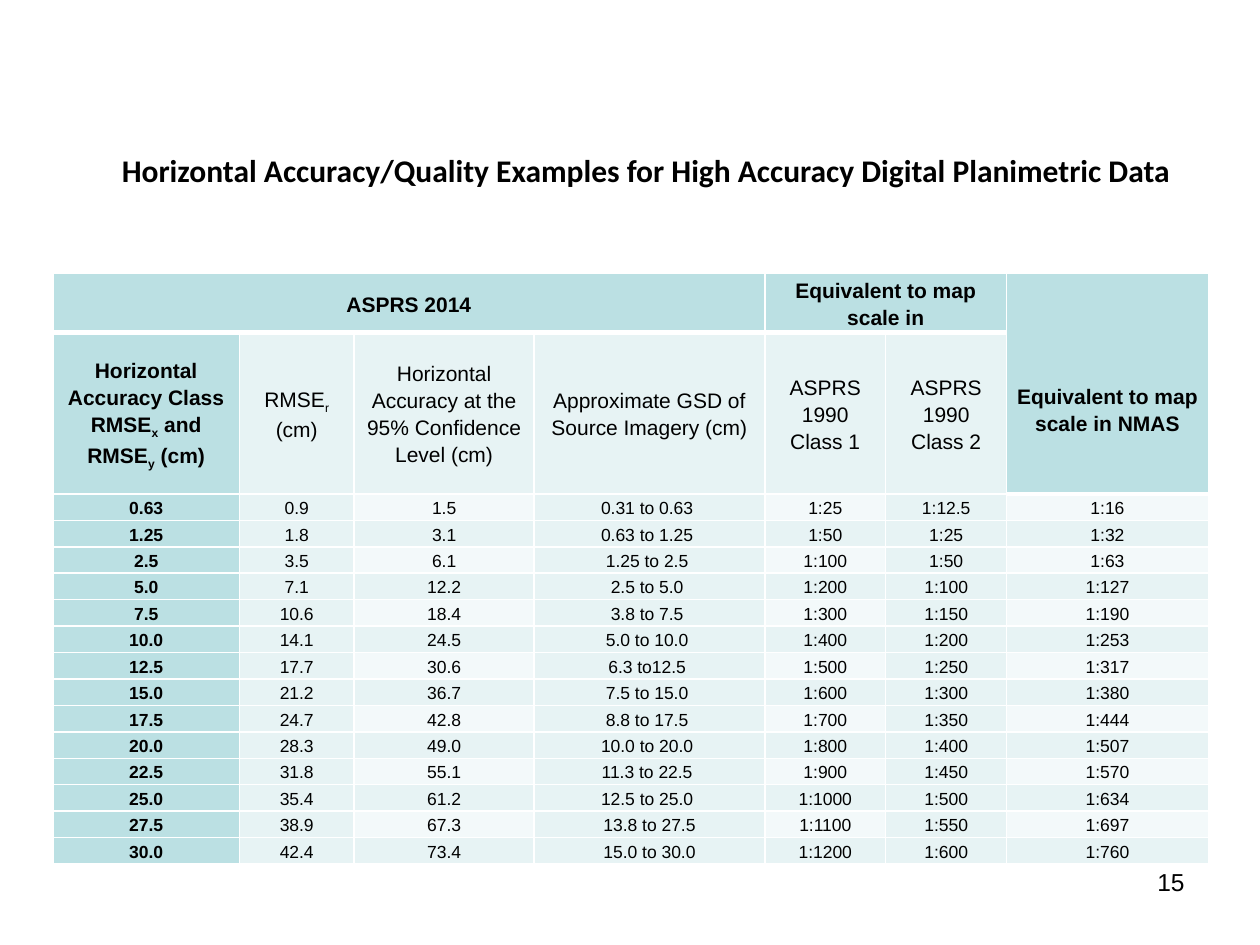
from lxml.etree import SubElement
from pptx import Presentation
from pptx.dml.color import RGBColor
from pptx.enum.text import MSO_ANCHOR, PP_ALIGN
from pptx.oxml.ns import qn
from pptx.util import Inches, Pt

HUES = {"ink": "000000", "line": "FFFFFF", "head": "BBE0E3",
        "band": "E7F3F4", "pale": "F3F9FA"}
WIDTHS = [1.48, 0.91, 1.43, 1.83, 0.96, 0.96, 1.6]
HEADS = [
    ["ASPRS 2014", "", "", "", "Equivalent to map scale in", "",
     "Equivalent to map scale in NMAS"],
    ["Horizontal Accuracy Class RMSE_x_ and RMSE_y_ (cm)", "RMSE_r_ (cm)",
     "Horizontal Accuracy at the 95% Confidence Level (cm)",
     "Approximate GSD of Source Imagery (cm)",
     "ASPRS 1990 Class 1", "ASPRS 1990 Class 2", ""],
]
DATA = [
    ["0.63", "0.9", "1.5", "0.31 to 0.63 ", "1:25", "1:12.5", "1:16"],
    ["1.25", "1.8", "3.1", "0.63 to 1.25 ", "1:50", "1:25", "1:32"],
    ["2.5", "3.5", "6.1", "1.25 to 2.5 ", "1:100", "1:50", "1:63"],
    ["5.0", "7.1", "12.2", "2.5 to 5.0 ", "1:200", "1:100", "1:127"],
    ["7.5", "10.6", "18.4", "3.8 to 7.5 ", "1:300", "1:150", "1:190"],
    ["10.0", "14.1", "24.5", "5.0 to 10.0 ", "1:400", "1:200", "1:253"],
    ["12.5", "17.7", "30.6", "6.3 to12.5 ", "1:500", "1:250", "1:317"],
    ["15.0", "21.2", "36.7", "7.5 to 15.0 ", "1:600", "1:300", "1:380"],
    ["17.5", "24.7", "42.8", "8.8 to 17.5 ", "1:700", "1:350", "1:444"],
    ["20.0", "28.3", "49.0", "10.0 to 20.0 ", "1:800", "1:400", "1:507"],
    ["22.5", "31.8", "55.1", "11.3 to 22.5 ", "1:900", "1:450", "1:570"],
    ["25.0", "35.4", "61.2", "12.5 to 25.0 ", "1:1000", "1:500", "1:634"],
    ["27.5", "38.9", "67.3", "13.8 to 27.5", "1:1100", "1:550", "1:697"],
    ["30.0", "42.4", "73.4", "15.0 to 30.0", "1:1200", "1:600", "1:760"],
]


def write(para, text, size, bold=False, face="Arial", align=PP_ALIGN.CENTER):
    """Fill a paragraph; parts between underscores become subscripts."""
    para.alignment = align
    font = para.font
    font.name, font.size, font.bold = face, Pt(size), bold
    font.color.rgb = RGBColor.from_string(HUES["ink"])
    for i, part in enumerate(text.split("_")):
        run = para.add_run()
        run.text = part
        if i % 2:
            run._r.get_or_add_rPr().set("baseline", "-25000")


def edge(cell, side, width):
    line = SubElement(cell._tc.get_or_add_tcPr(), qn(f"a:ln{side}"),
                      w=str(Pt(width)))
    fill = SubElement(line, qn("a:solidFill"))
    SubElement(fill, qn("a:srgbClr"), val=HUES["line"])


deck = Presentation()
deck.slide_width, deck.slide_height = Inches(10), Inches(7.5)
slide = deck.slides.add_slide(deck.slide_layouts[5])

title = slide.shapes.title
title.left, title.top = Inches(0.42), Inches(1)
title.width, title.height = Inches(9.42), Inches(0.7)
title.text_frame.vertical_anchor = MSO_ANCHOR.MIDDLE
write(title.text_frame.paragraphs[0],
      "Horizontal Accuracy/Quality Examples for High Accuracy Digital Planimetric Data",
      18, True, "Calibri")

rows = HEADS + DATA
tall = [0.47, 1.28] + [0.21] * len(DATA)
grid = slide.shapes.add_table(
    len(rows), len(WIDTHS), Inches(0.42), Inches(2.17),
    Inches(sum(WIDTHS)), Inches(sum(tall))).table
for col, width in zip(grid.columns, WIDTHS):
    col.width = Inches(width)
for row, height in zip(grid.rows, tall):
    row.height = Inches(height)
for first, last in [((0, 0), (0, 3)), ((0, 4), (0, 5)), ((0, 6), (1, 6))]:
    grid.cell(*first).merge(grid.cell(*last))

for r, texts in enumerate(rows):
    for c, text in enumerate(texts):
        cell = grid.cell(r, c)
        nmas = c == 6 and r < 2
        strong = r == 0 or c == 0 or nmas
        cell.margin_left = cell.margin_right = Inches(0.07)
        # The NMAS heading sits below the middle of its two rows
        cell.margin_top = Inches(0.4 if nmas else 0)
        cell.margin_bottom = 0
        cell.vertical_anchor = MSO_ANCHOR.MIDDLE
        under = r == 1 and c < 6 or r == 2 and c == 6
        over = r == 0 or nmas
        for side, width in [("L", 1), ("R", 1), ("T", 3 if under else 1),
                            ("B", 3 if over else 1)]:
            edge(cell, side, width)
        pale = r > 1 and r % 2 == 0 and c in (2, 4, 6)
        hue = "head" if strong else "pale" if pale else "band"
        cell.fill.solid()
        cell.fill.fore_color.rgb = RGBColor.from_string(HUES[hue])
        para = cell.text_frame.paragraphs[0]
        para.line_spacing = 1.15
        if cell.is_spanned:
            para.font.size = Pt(10)
        else:
            write(para, text, 12 if r < 2 else 10, strong)

page = slide.shapes.add_textbox(Inches(7.17), Inches(6.83),
                                Inches(2.33), Inches(0.52))
page.text_frame.word_wrap = True
write(page.text_frame.paragraphs[0], "15", 14, align=PP_ALIGN.RIGHT)

deck.save("out.pptx")
